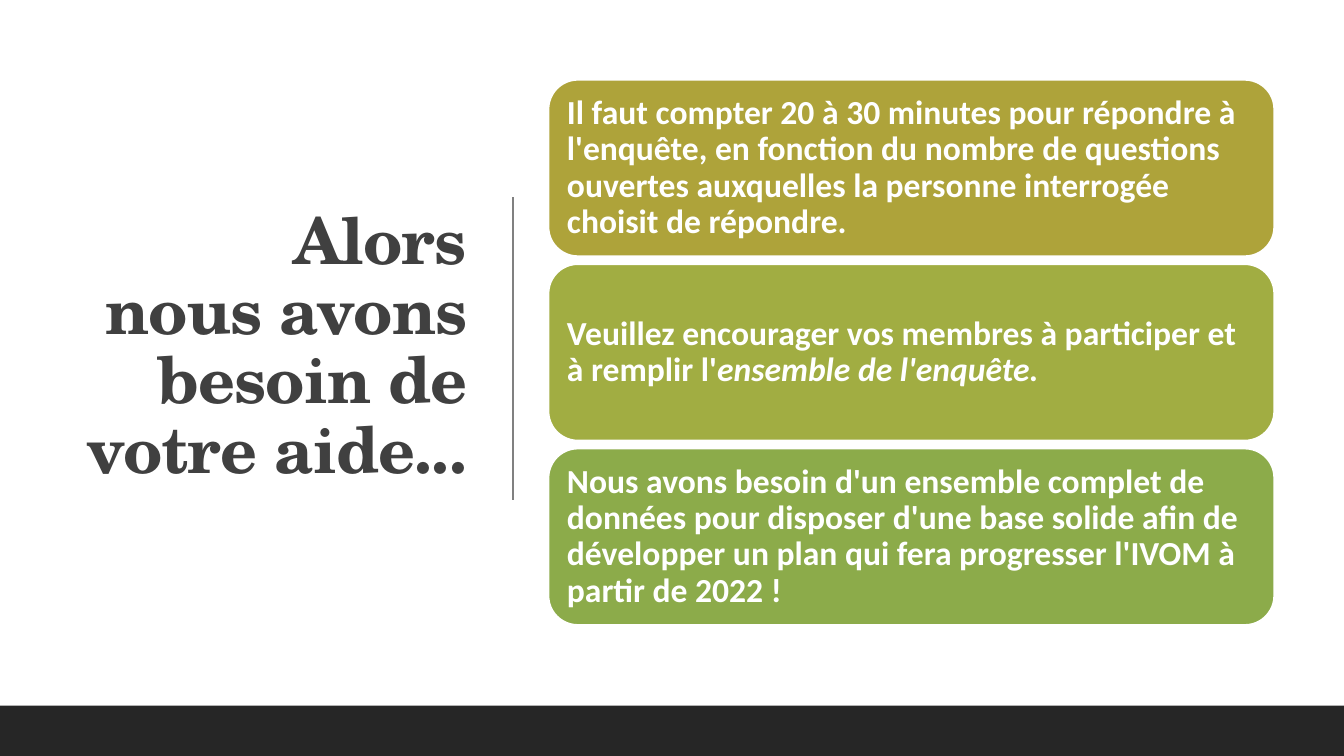
"""Build a slide that asks members to help with a survey."""
from pptx import Presentation
from pptx.dml.color import RGBColor
from pptx.enum.shapes import MSO_CONNECTOR, MSO_SHAPE
from pptx.enum.text import MSO_ANCHOR, PP_ALIGN
from pptx.oxml.ns import qn
from pptx.util import Pt
from lxml.etree import SubElement

COLORS = {
    "white": "FFFFFF",
    "title": "404040",
    "divider": "808080",
    "footer": "262626",
    "olive": "AEA33A",
    "lime": "A1AD42",
    "green": "8CAB4A",
}
TITLE = "Alors\vnous avons besoin de votre aide..."
CARDS = [
    ("olive", [("Il faut compter 20 à 30 minutes pour répondre à l'enquête, en fonction du "
                "nombre de questions ouvertes auxquelles la personne interrogée choisit "
                "de répondre.", False)]),
    ("lime", [("Veuillez encourager vos membres à participer et à remplir l'", False),
              ("ensemble de l'enquête.", True)]),
    ("green", [("Nous avons besoin d'un ensemble complet de données pour disposer d'une base "
                "solide afin de développer un plan qui fera progresser l'IVOM à partir "
                "de 2022 !", False)]),
]
SLIDE_WIDTH, SLIDE_HEIGHT = 960, 540
FOOTER_HEIGHT = 36
TITLE_BOX = (50.4, 49.7, 290.2, 398.2)
DIVIDER_X, DIVIDER_TOP, DIVIDER_BOTTOM = 366.5, 141, 357
CARD_LEFT, CARD_TOP, CARD_WIDTH, CARD_HEIGHT = 391.8, 57, 518.4, 126
CARD_GAP = 5.7
INSET = 7.2


def rgb(name):
    return RGBColor.from_string(COLORS[name])


def add_block(slide, kind, box, fill, line=None):
    shape = slide.shapes.add_shape(kind, *map(Pt, box))
    shape.shadow.inherit = False
    shape.fill.solid()
    shape.fill.fore_color.rgb = rgb(fill)
    if line:
        shape.line.color.rgb = rgb(line)
        shape.line.width = Pt(1.25)
    else:
        shape.line.fill.background()
    return shape


def prepare_text(shape, alignment, font_name, size, color):
    frame = shape.text_frame
    frame.word_wrap = True
    frame.vertical_anchor = MSO_ANCHOR.MIDDLE
    paragraph = frame.paragraphs[0]
    paragraph.alignment = alignment
    paragraph.line_spacing = 0.9
    font = paragraph.font
    font.name, font.size, font.bold = font_name, Pt(size), True
    font.color.rgb = rgb(color)
    return paragraph


def add_title(slide):
    box = slide.shapes.add_textbox(*map(Pt, TITLE_BOX))
    box.text_frame.text = TITLE
    paragraph = prepare_text(box, PP_ALIGN.RIGHT, "TeX Gyre Schola", 46, "title")
    paragraph._p.pPr.find(qn("a:defRPr")).set("spc", "-50")


def add_divider(slide):
    divider = slide.shapes.add_connector(
        MSO_CONNECTOR.STRAIGHT, Pt(DIVIDER_X), Pt(DIVIDER_TOP), Pt(DIVIDER_X), Pt(DIVIDER_BOTTOM))
    divider.line.color.rgb = rgb("divider")
    divider.line.width = Pt(1)
    SubElement(divider._element.spPr, qn("a:effectLst"))


def add_card(slide, index, fill, runs):
    top = CARD_TOP + index * (CARD_HEIGHT + CARD_GAP)
    card = add_block(slide, MSO_SHAPE.ROUNDED_RECTANGLE,
                     (CARD_LEFT, top, CARD_WIDTH, CARD_HEIGHT), fill, "white")
    frame = card.text_frame
    frame.margin_left = frame.margin_right = Pt(INSET)
    frame.margin_top = frame.margin_bottom = Pt(INSET)
    paragraph = prepare_text(card, PP_ALIGN.LEFT, "Calibri", 24, "white")
    for text, italic in runs:
        run = paragraph.add_run()
        run.text = text
        if italic:
            run.font.italic = True


def main():
    presentation = Presentation()
    presentation.slide_width, presentation.slide_height = Pt(SLIDE_WIDTH), Pt(SLIDE_HEIGHT)
    slide = presentation.slides.add_slide(presentation.slide_layouts[6])
    add_block(slide, MSO_SHAPE.RECTANGLE, (0, 0, SLIDE_WIDTH, SLIDE_HEIGHT), "white")
    add_title(slide)
    add_divider(slide)
    add_block(slide, MSO_SHAPE.RECTANGLE,
              (0, SLIDE_HEIGHT - FOOTER_HEIGHT, SLIDE_WIDTH, FOOTER_HEIGHT), "footer")
    for index, (fill, runs) in enumerate(CARDS):
        add_card(slide, index, fill, runs)
    presentation.save("out.pptx")


if __name__ == "__main__":
    main()
